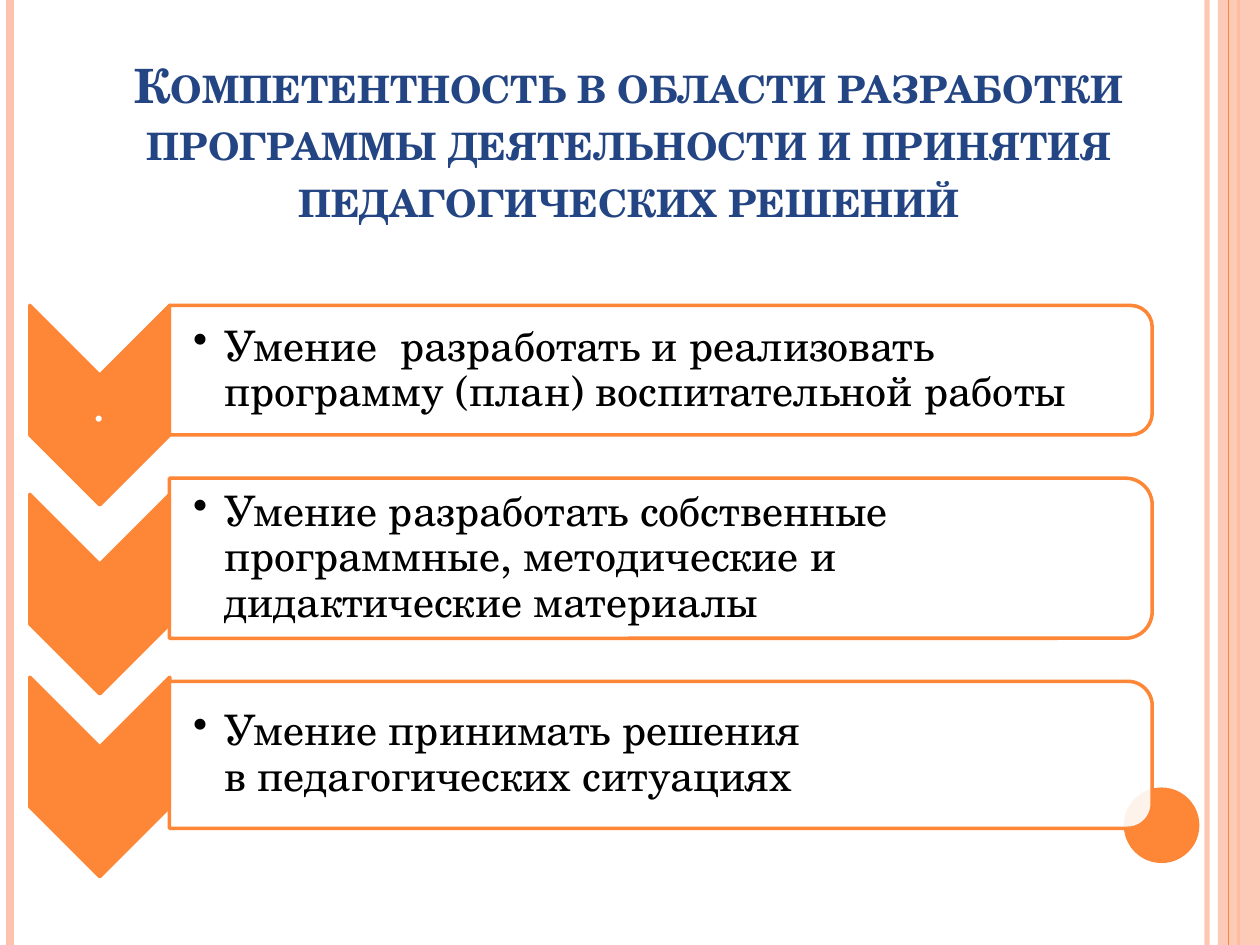
import dataclasses

import lxml.etree
import pptx
import pptx.dml.color
import pptx.enum.shapes
import pptx.enum.text
import pptx.oxml.ns
import pptx.util

Pt = pptx.util.Pt
qn = pptx.oxml.ns.qn
SHAPE = pptx.enum.shapes.MSO_SHAPE
ANCHOR = pptx.enum.text.MSO_ANCHOR
ALIGN = pptx.enum.text.PP_ALIGN

FONT = "TeX Gyre Schola"
ORANGE, PEACH, WHITE, BLUE, BLACK = "FE8637", "FEC3AE", "FFFFFF", "244583", "000000"
SLIDE_W, SLIDE_H = 720, 540
CHEVRON_X, CHEVRON_LENGTH, CHEVRON_W = 57, 114, 80
PANEL_LEFT, PANEL_W = 96.8, 561.6
TITLE = ("Компетентность в области разработки программы деятельности "
         "и принятия педагогических решений")


@dataclasses.dataclass
class Rule:
    x: float
    width: float
    color: str
    alpha: int = 100


@dataclasses.dataclass
class Skill:
    """One row: vertical centres of its chevron and panel, and its texts."""
    chevron_y: float
    panel_y: float
    panel_h: float
    text: str
    mark: str = ""


RULES = [
    Rule(689.8, 3, PEACH, 93),
    Rule(5.8, 4.5, PEACH),
    Rule(707.8, 1.5, ORANGE),
    Rule(702, 0.75, ORANGE),
]
SKILLS = [
    Skill(231.5, 211.5, 74,
          "Умение  разработать и реализовать программу (план) воспитательной работы", "."),
    Skill(339.5, 319, 91.5,
          "Умение разработать собственные программные, методические и дидактические материалы"),
    Skill(444, 431.3, 84,
          "Умение принимать решения\nв педагогических ситуациях"),
]


def paint(fmt, color: str, alpha: int = 100) -> None:
    """Give a fill or a line's fill a solid colour, alpha in percent."""
    fmt.solid()
    fmt.fore_color.rgb = pptx.dml.color.RGBColor.from_string(color)
    if alpha < 100:
        clr = fmt._xPr.find(qn("a:solidFill"))[0]
        lxml.etree.SubElement(clr, qn("a:alpha"), val=str(alpha * 1000))


def add_rule(s, rule: Rule) -> None:
    line = s.shapes.add_connector(pptx.enum.shapes.MSO_CONNECTOR.STRAIGHT,
                                  Pt(rule.x), Pt(0), Pt(rule.x), Pt(SLIDE_H))
    line.line.width = Pt(rule.width)
    paint(line.line.fill, rule.color, rule.alpha)
    lxml.etree.SubElement(line._element.spPr, qn("a:effectLst"))


def add_shape(s, kind, cx: float, cy: float, w: float, h: float, fill: str,
              alpha: int = 100, line: str = "", rotation: float = 0):
    """Add a preset shape around its centre."""
    sp = s.shapes.add_shape(kind, Pt(cx - w / 2), Pt(cy - h / 2), Pt(w), Pt(h))
    sp.shadow.inherit = False
    sp.rotation = rotation
    paint(sp.fill, fill, alpha)
    if line:
        paint(sp.line.fill, line)
        sp.line.width = Pt(2)
    else:
        sp.line.fill.background()
    return sp


def write(tf, text: str, *, size: float, color: str, bold: bool = False,
          small_caps: bool = False, align=ALIGN.LEFT, anchor=ANCHOR.MIDDLE,
          spacing: float = 1, bullet: bool = False) -> None:
    tf.word_wrap = True
    tf.auto_size = pptx.enum.text.MSO_AUTO_SIZE.NONE
    tf.vertical_anchor = anchor
    p = tf.paragraphs[0]
    p.alignment = align
    p.line_spacing = spacing
    for i, part in enumerate(text.splitlines()):
        if i:
            p.add_line_break()
        r = p.add_run()
        r.text = part
        r.font.name = FONT
        r.font.size = Pt(size)
        r.font.bold = bold
        paint(r.font.fill, color)
        if small_caps:
            r.font._element.set("cap", "small")
    if bullet:
        pPr = p._p.get_or_add_pPr()
        pPr.set("marL", str(Pt(18)))
        pPr.set("indent", str(Pt(-18)))
        lxml.etree.SubElement(pPr, qn("a:buChar"), char="•")


def add_text(s, left: float, cy: float, w: float, h: float, text: str,
             inset: float = 1.4, **fmt) -> None:
    tf = s.shapes.add_textbox(Pt(left), Pt(cy - h / 2), Pt(w), Pt(h)).text_frame
    tf.margin_left = Pt(inset)
    tf.margin_right = tf.margin_top = tf.margin_bottom = Pt(1.4)
    write(tf, text, spacing=0.9, **fmt)


def add_skill(s, skill: Skill) -> None:
    add_shape(s, SHAPE.CHEVRON, CHEVRON_X, skill.chevron_y, CHEVRON_LENGTH, CHEVRON_W,
              ORANGE, line=ORANGE, rotation=90)
    if skill.mark:
        add_text(s, CHEVRON_X - CHEVRON_W / 2, skill.chevron_y, CHEVRON_W, 34,
                 skill.mark, size=28, color=WHITE, align=ALIGN.CENTER)
    add_shape(s, SHAPE.ROUND_2_SAME_RECTANGLE, PANEL_LEFT + PANEL_W / 2, skill.panel_y,
              skill.panel_h, PANEL_W, WHITE, alpha=90, line=ORANGE, rotation=90)
    add_text(s, PANEL_LEFT, skill.panel_y, PANEL_W - 4, skill.panel_h - 8, skill.text,
             inset=13.5, size=24, color=BLACK, bullet=True)


def main() -> None:
    prs = pptx.Presentation()
    prs.slide_width, prs.slide_height = Pt(SLIDE_W), Pt(SLIDE_H)
    s = prs.slides.add_slide(prs.slide_layouts.get_by_name("Title Only"))
    paint(s.background.fill, WHITE)

    for rule in RULES[:3]:
        add_rule(s, rule)
    add_shape(s, SHAPE.RECTANGLE, 708, SLIDE_H / 2, 24, SLIDE_H, PEACH, alpha=87)
    add_rule(s, RULES[3])
    add_shape(s, SHAPE.OVAL, 663.8, 471.6, 43.2, 43.2, ORANGE)

    title = s.shapes.title
    title.left, title.top, title.width, title.height = Pt(65.5), Pt(43.2), Pt(588), Pt(90)
    write(title.text_frame, TITLE, size=27, color=BLUE, bold=True, small_caps=True,
          align=ALIGN.CENTER, anchor=ANCHOR.BOTTOM)

    for skill in SKILLS:
        add_skill(s, skill)
    prs.save("out.pptx")


if __name__ == "__main__":
    main()
